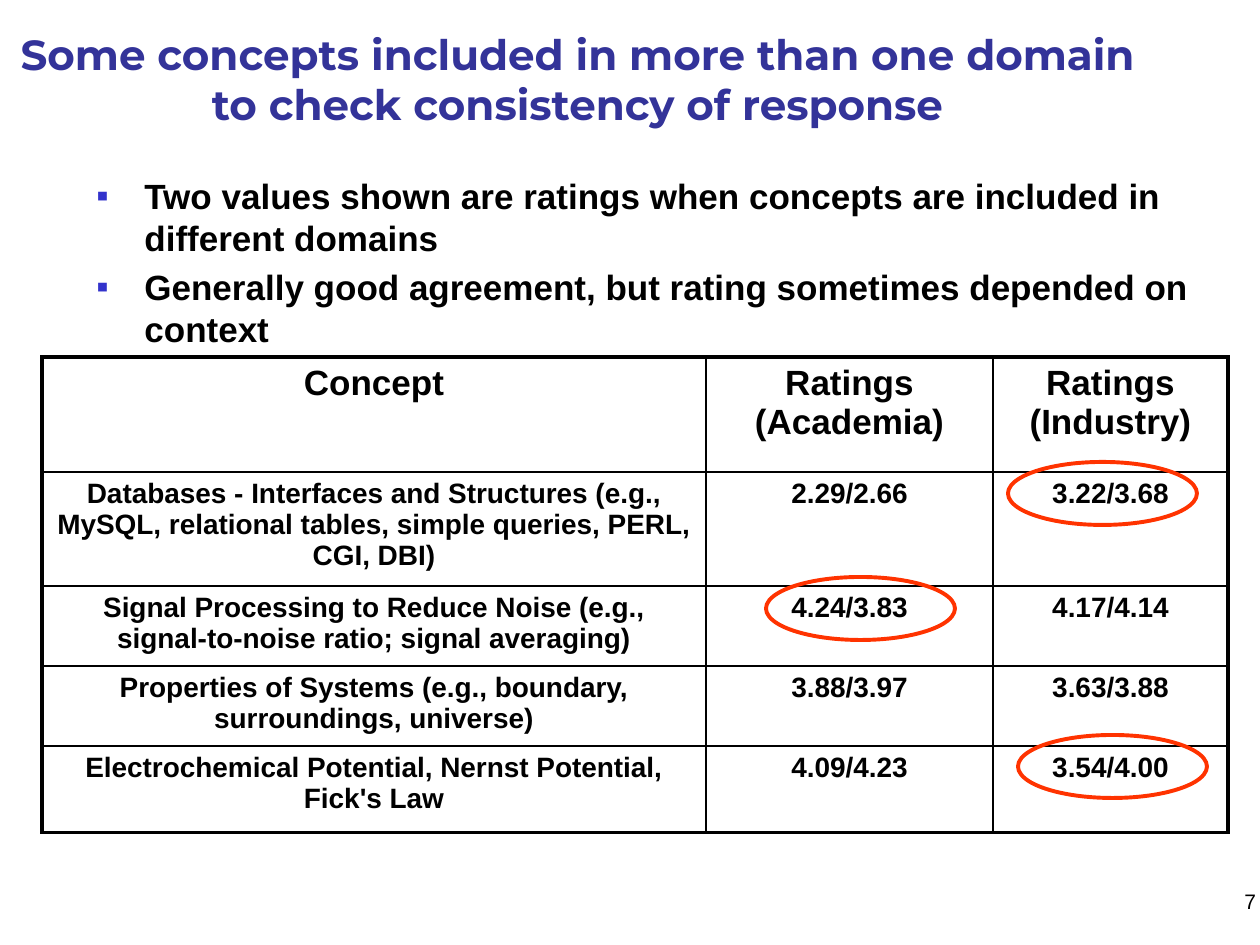
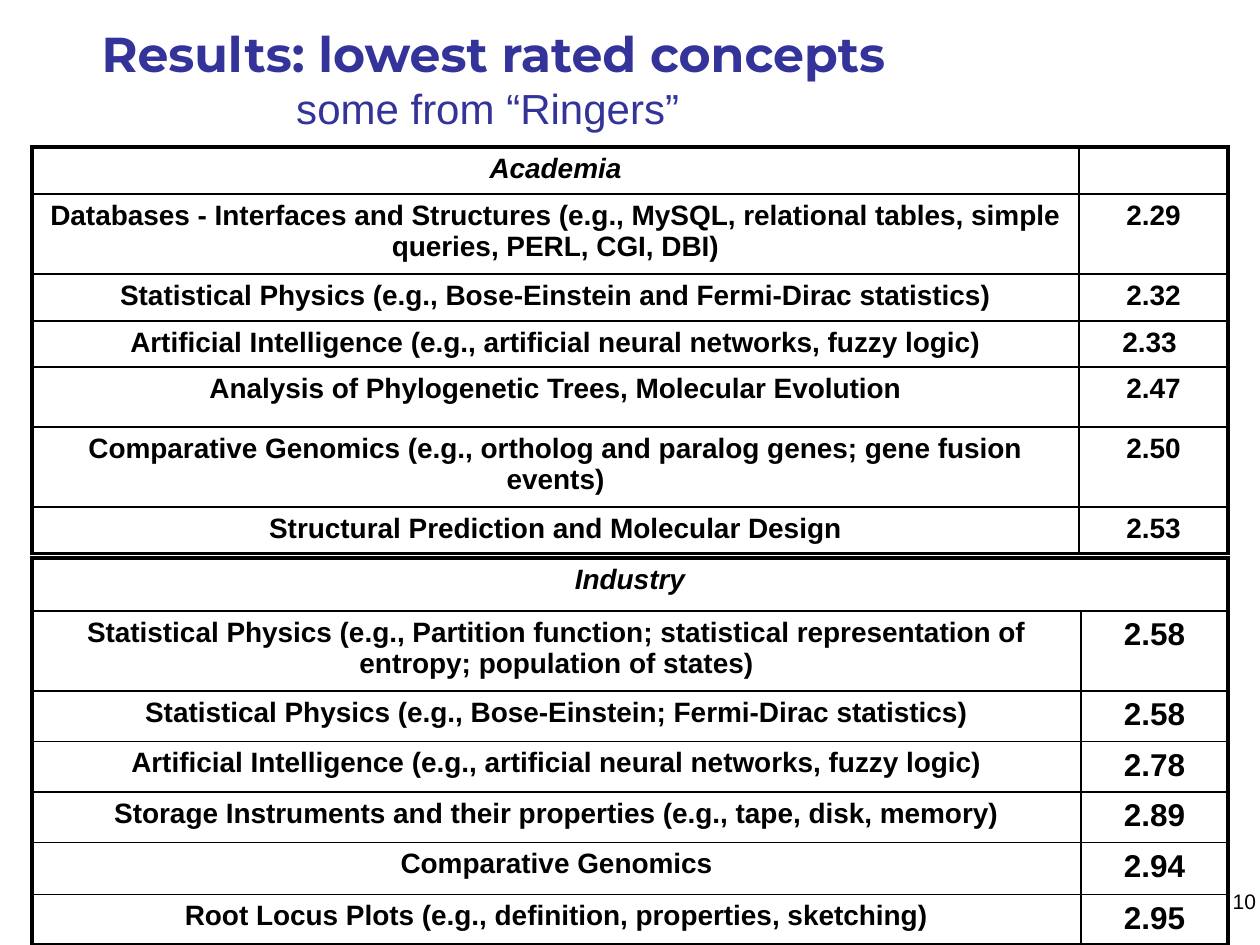
from dataclasses import dataclass, field
from typing import Any

import lxml.etree
import pptx
import pptx.dml.color
import pptx.enum.shapes
import pptx.enum.text
import pptx.oxml.ns
import pptx.util

# Shared look
PX = 914400 / 126
BLACK = pptx.dml.color.RGBColor(0x00, 0x00, 0x00)
TITLE_BLUE = pptx.dml.color.RGBColor(0x33, 0x33, 0x99)
BULLET_BLUE = pptx.dml.color.RGBColor(0x33, 0x33, 0xCC)
RING_RED = pptx.dml.color.RGBColor(0xFF, 0x33, 0x00)
OUTER_LINE, INNER_LINE = 2.25, 1
ALIGN = pptx.enum.text.PP_ALIGN
ANCHOR = pptx.enum.text.MSO_ANCHOR

Format = dict[str, Any]
TITLE: Format = {"name": "Montserrat", "size": 24, "bold": True, "color": TITLE_BLUE}
SUBTITLE: Format = {"name": "Arial", "size": 24, "bold": False, "color": TITLE_BLUE}
BODY: Format = {"name": "Arial", "size": 20, "bold": True, "color": BLACK}
CELL: Format = BODY | {"size": 16}
GROUP_HEADER: Format = CELL | {"italic": True}
FOOTER: Format = {"name": "Arial", "size": 12, "color": BLACK}


@dataclass
class Area:
    left: int
    top: int
    width: int
    height: int

    def emu(self) -> list[int]:
        return [px(side) for side in (self.left, self.top, self.width, self.height)]


@dataclass
class Grid:
    left: int
    top: int
    columns: list[int]
    heights: list[int]
    rows: list[tuple[str, ...]]
    header: Format
    rating: Format = field(default_factory=lambda: CELL)
    wide_header: bool = False


PAGE_NUMBER = Area(998, 882, 262, 63)
PAGE_NUMBER_INSET = 4
RING_WIDTH, RING_HEIGHT = 189, 63


def px(length: int) -> int:
    return round(length * PX)


# Text
def add_span(para, text: str, style: Format) -> None:
    span = para.add_run()
    span.text = text
    for key, value in style.items():
        if key == "color":
            span.font.color.rgb = value
        else:
            setattr(span.font, key, pptx.util.Pt(value) if key == "size" else value)


def add_box(page, area: Area, anchor=ANCHOR.TOP):
    frame = page.shapes.add_textbox(*area.emu()).text_frame
    frame.word_wrap = True
    frame.vertical_anchor = anchor
    return frame


def add_title(page, area: Area, lines: list[tuple[str, Format]]) -> None:
    para = add_box(page, area, ANCHOR.MIDDLE).paragraphs[0]
    para.alignment = ALIGN.CENTER
    for index, (text, style) in enumerate(lines):
        if index:
            para.add_line_break()
        add_span(para, text, style)


def add_page_number(page, number: int) -> None:
    # A narrow right inset keeps the number clear of the tables
    frame = add_box(page, PAGE_NUMBER)
    frame.margin_right = px(PAGE_NUMBER_INSET)
    para = frame.paragraphs[0]
    para.alignment = ALIGN.RIGHT
    add_span(para, str(number), FOOTER)


def add_bullets(page, area: Area, texts: list[str]) -> None:
    frame = add_box(page, area)
    for index, text in enumerate(texts):
        para = frame.add_paragraph() if index else frame.paragraphs[0]
        if index:
            para.space_before = pptx.util.Pt(4)
        properties = para._p.get_or_add_pPr()
        properties.set("marL", str(px(48)))
        properties.set("indent", str(px(-48)))
        color = add_element(properties, "a:buClr")
        add_element(color, "a:srgbClr", val=str(BULLET_BLUE))
        add_element(properties, "a:buFont", typeface="Arial")
        add_element(properties, "a:buChar", char="▪")
        add_span(para, text, BODY)


def add_element(parent, tag: str, **attributes: str):
    return lxml.etree.SubElement(parent, pptx.oxml.ns.qn(tag), **attributes)


# Tables
def set_borders(cell, outer_sides: dict[str, bool]) -> None:
    properties = cell._tc.get_or_add_tcPr()
    for side, is_outer in outer_sides.items():
        width = pptx.util.Pt(OUTER_LINE if is_outer else INNER_LINE)
        line = add_element(properties, f"a:ln{side}", w=str(int(width)))
        add_element(add_element(line, "a:solidFill"), "a:srgbClr", val=str(BLACK))
    cell.fill.background()


def fill_cell(cell, text: str, style: Format) -> None:
    para = cell.text_frame.paragraphs[0]
    para.alignment = ALIGN.CENTER
    if text:
        add_span(para, text, style)
    else:
        para._p.get_or_add_endParaRPr().set("sz", str(style["size"] * 100))


def add_grid(page, grid: Grid) -> None:
    area = Area(grid.left, grid.top, sum(grid.columns), sum(grid.heights))
    row_count, column_count = len(grid.rows), len(grid.columns)
    table = page.shapes.add_table(row_count, column_count, *area.emu()).table
    table.first_row = table.horz_banding = False
    for column, width in zip(table.columns, grid.columns):
        column.width = px(width)
    for row, height in zip(table.rows, grid.heights):
        row.height = px(height)
    if grid.wide_header:
        table.cell(0, 0).merge(table.cell(0, column_count - 1))
    for row_index, texts in enumerate(grid.rows):
        for column_index, text in enumerate(texts):
            cell = table.cell(row_index, column_index)
            body = grid.rating if column_index else CELL
            fill_cell(cell, text, body if row_index else grid.header)
            set_borders(cell, {
                "L": column_index == 0,
                "R": column_index + cell.span_width == column_count,
                "T": row_index == 0,
                "B": row_index == row_count - 1,
            })


# Rings around ratings that differ
def add_ring(page, left: int, top: int) -> None:
    area = Area(left, top, RING_WIDTH, RING_HEIGHT)
    ring = page.shapes.add_shape(pptx.enum.shapes.MSO_SHAPE.OVAL, *area.emu())
    ring.shadow.inherit = False
    ring.fill.background()
    ring.line.color.rgb = RING_RED
    ring.line.width = pptx.util.Pt(2.25)


# Content
DATABASES = ("Databases - Interfaces and Structures (e.g., MySQL, relational tables, "
             "simple queries, PERL, CGI, DBI)")
INTELLIGENCE = "Artificial Intelligence (e.g., artificial neural networks, fuzzy logic)"

CONSISTENCY = Grid(
    42, 357, [664, 287, 235], [115, 114, 80, 79, 87],
    [
        ("Concept", "Ratings (Academia)", "Ratings (Industry)"),
        (DATABASES, "2.29/2.66", "3.22/3.68"),
        ("Signal Processing to Reduce Noise (e.g., signal-to-noise ratio; signal averaging)",
         "4.24/3.83", "4.17/4.14"),
        ("Properties of Systems (e.g., boundary, surroundings, universe)",
         "3.88/3.97", "3.63/3.88"),
        ("Electrochemical Potential, Nernst Potential, Fick's Law",
         "4.09/4.23", "3.54/4.00"),
    ],
    header=BODY,
)
ACADEMIA = Grid(
    32, 147, [1047, 149], [47, 80, 47, 46, 60, 80, 46],
    [
        ("Academia", ""),
        (DATABASES, "2.29"),
        ("Statistical Physics (e.g., Bose-Einstein and Fermi-Dirac statistics)", "2.32"),
        (INTELLIGENCE, "2.33 "),
        ("Analysis of Phylogenetic Trees, Molecular Evolution", "2.47"),
        ("Comparative Genomics (e.g., ortholog and paralog genes; gene fusion events)", "2.50"),
        ("Structural Prediction and Molecular Design", "2.53"),
    ],
    header=GROUP_HEADER,
)
INDUSTRY = Grid(
    32, 558, [1049, 147], [53, 80, 50, 50, 50, 52, 50],
    [
        ("Industry", ""),
        ("Statistical Physics (e.g., Partition function; statistical representation of "
         "entropy; population of states)", "2.58"),
        ("Statistical Physics (e.g., Bose-Einstein; Fermi-Dirac statistics)", "2.58"),
        (INTELLIGENCE, "2.78"),
        ("Storage Instruments and their properties (e.g., tape, disk, memory)", "2.89"),
        ("Comparative Genomics", "2.94"),
        ("Root Locus Plots (e.g., definition, properties, sketching)", "2.95"),
    ],
    header=GROUP_HEADER,
    rating=CELL | {"size": 18},
    wide_header=True,
)


# Slides
def add_consistency_page(page) -> None:
    add_page_number(page, 7)
    add_title(page, Area(0, 0, 1155, 157), [
        ("Some concepts included in more than one domain to check consistency of response",
         TITLE),
    ])
    add_bullets(page, Area(84, 168, 1176, 567), [
        "Two values shown are ratings when concepts are included in different domains",
        "Generally good agreement, but rating sometimes depended on context",
    ])
    add_grid(page, CONSISTENCY)
    for left, top in [(1008, 462), (766, 577), (1018, 735)]:
        add_ring(page, left, top)


def add_lowest_page(page) -> None:
    add_page_number(page, 10)
    add_title(page, Area(-42, 0, 1071, 157), [
        ("Results: lowest rated concepts", TITLE | {"size": 28}),
        ("some from “Ringers” ", SUBTITLE),
    ])
    add_grid(page, ACADEMIA)
    add_grid(page, INDUSTRY)


def main() -> None:
    deck = pptx.Presentation()
    deck.slide_width, deck.slide_height = px(1260), px(945)
    for draw_page in (add_consistency_page, add_lowest_page):
        draw_page(deck.slides.add_slide(deck.slide_layouts[6]))
    deck.save("out.pptx")


if __name__ == "__main__":
    main()
